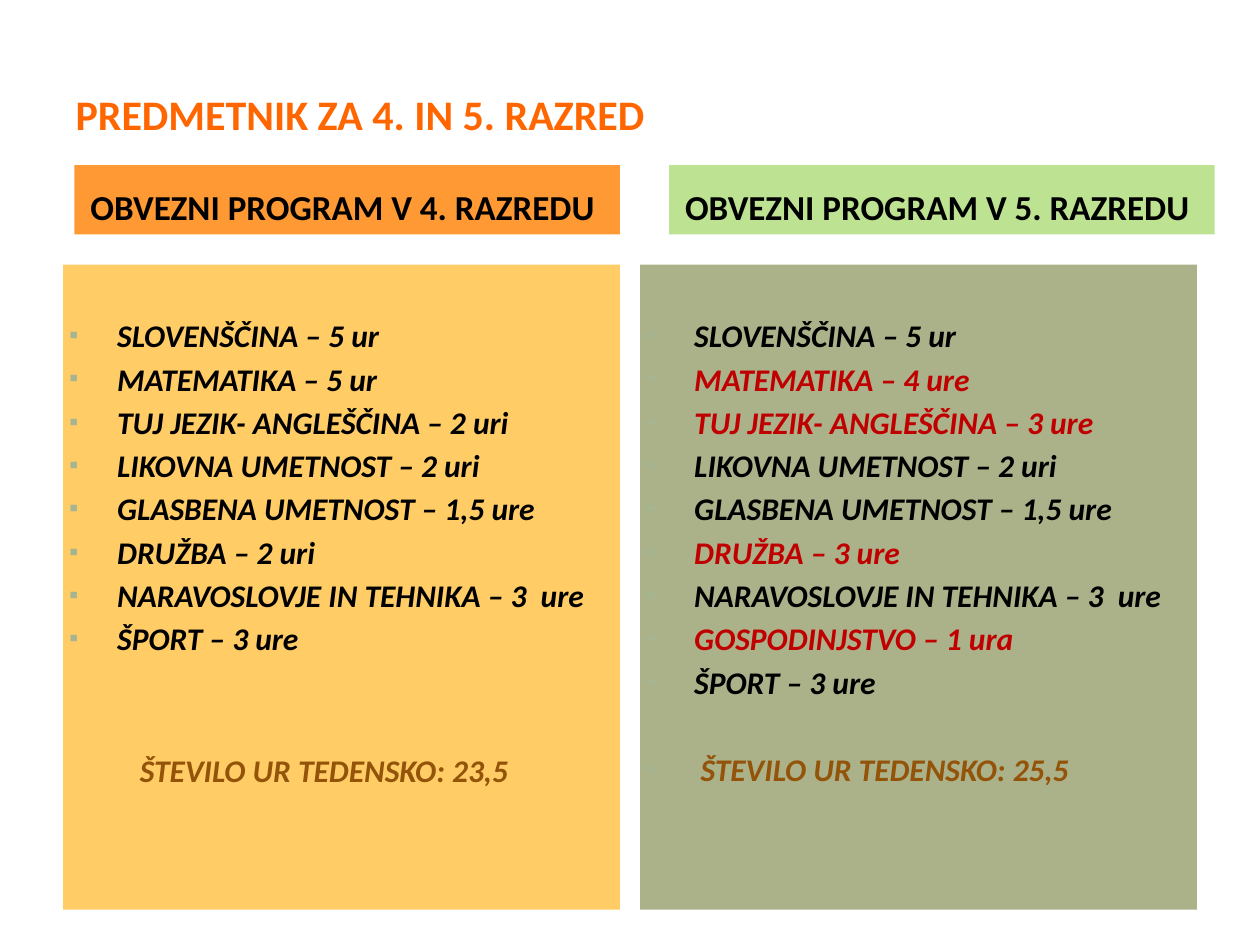
from lxml import etree
from pptx import Presentation
from pptx import util as u
from pptx.dml.color import RGBColor
from pptx.enum import text
from pptx.oxml.ns import qn

COLORS = {
    "title": "FF6600", "ink": "000000", "changed": "C00000", "total": "93540A",
    "bullet": "A5B592", "head4": "FF9933", "list4": "FFCC66",
    "head5": "BCE292", "list5": "ABB189",
}
ALIGN = text.PP_ALIGN
ANCHOR = text.MSO_ANCHOR
INDENT = 0.38

GRADE_4 = [
    ("SLOVENŠČINA – 5 ur", "ink"),
    ("MATEMATIKA – 5 ur", "ink"),
    ("TUJ JEZIK- ANGLEŠČINA – 2 uri", "ink"),
    ("LIKOVNA UMETNOST – 2 uri", "ink"),
    ("GLASBENA UMETNOST – 1,5 ure", "ink"),
    ("DRUŽBA – 2 uri", "ink"),
    ("NARAVOSLOVJE IN TEHNIKA – 3  ure", "ink"),
    ("ŠPORT – 3 ure", "ink"),
]
GRADE_5 = [
    ("SLOVENŠČINA – 5 ur", "ink"),
    ("MATEMATIKA – 4 ure", "changed"),
    ("TUJ JEZIK- ANGLEŠČINA – 3 ure", "changed"),
    ("LIKOVNA UMETNOST – 2 uri", "ink"),
    ("GLASBENA UMETNOST – 1,5 ure", "ink"),
    ("DRUŽBA – 3 ure", "changed"),
    ("NARAVOSLOVJE IN TEHNIKA – 3  ure", "ink"),
    ("GOSPODINJSTVO – 1 ura", "changed"),
    ("ŠPORT – 3 ure", "ink"),
]


def set_all(target, values):
    for name, value in values.items():
        setattr(target, name, value)


def place(box, bounds, insets, anchor, fill=None):
    """Move a placeholder; insets run left, top, right, bottom."""
    set_all(box, dict(zip(("left", "top", "width", "height"), map(u.Inches, bounds))))
    sides = ("margin_left", "margin_top", "margin_right", "margin_bottom")
    set_all(box.text_frame, dict(zip(sides, map(u.Inches, insets))))
    set_all(box.text_frame, {"word_wrap": True, "vertical_anchor": anchor,
                             "auto_size": text.MSO_AUTO_SIZE.NONE})
    if fill:
        box.fill.solid()
        box.fill.fore_color.rgb = RGBColor.from_string(COLORS[fill])


def write(para, words, size, color, italic=False):
    span = para.add_run()
    span.text = words
    set_all(span.font, {"name": "Calibri", "size": u.Pt(size), "bold": True, "italic": italic})
    span.font.color.rgb = RGBColor.from_string(COLORS[color])


def set_bullet(para, margin, shown=True):
    props = para._p.get_or_add_pPr()
    props.set("marL", str(u.Inches(margin)))
    props.set("indent", str(-u.Inches(margin) if shown else 0))
    if not shown:
        etree.SubElement(props, qn("a:buNone"))
        return
    color = etree.SubElement(props, qn("a:buClr"))
    etree.SubElement(color, qn("a:srgbClr"), val=COLORS["bullet"])
    etree.SubElement(props, qn("a:buSzPct"), val="80000")
    etree.SubElement(props, qn("a:buFont"), typeface="Calibri")
    etree.SubElement(props, qn("a:buChar"), char="▪")


def add_heading(box, words, left, fill):
    place(box, (left, 1.31, 4.33, 0.55), (0.05, 0.05, 0.12, 0.05), ANCHOR.BOTTOM, fill)
    para = box.text_frame.paragraphs[0]
    set_all(para, {"alignment": ALIGN.CENTER, "space_before": u.Pt(0)})
    write(para, words, 20, "ink")


def add_subjects(box, subjects, left, fill):
    place(box, (left, 2.1, 4.42, 5.12), (0.05, 0.41, 0.05, 0.05), ANCHOR.TOP, fill)
    frame = box.text_frame
    for number, (words, color) in enumerate(subjects):
        para = frame.add_paragraph() if number else frame.paragraphs[0]
        set_bullet(para, INDENT)
        para.space_before = u.Pt(3.15 if number else 0)
        write(para, words, 18, color, italic=True)


def add_total(box, hours, margin, gap, bulleted):
    para = box.text_frame.add_paragraph()
    set_bullet(para, margin, bulleted)
    para.space_before = u.Pt(gap)
    write(para, f"ŠTEVILO UR TEDENSKO: {hours}", 18, "total", italic=True)


def main():
    deck = Presentation()
    set_all(deck, {"slide_width": u.Inches(10), "slide_height": u.Inches(7.5)})
    page = deck.slides.add_slide(deck.slide_layouts.get_by_name("Comparison"))
    title, head4, list4, head5, list5 = page.placeholders

    place(title, (0.5, 0.33, 9, 0.82), (0.1, 0.05, 0.1, 0.05), ANCHOR.BOTTOM)
    para = title.text_frame.paragraphs[0]
    para.alignment = ALIGN.LEFT
    write(para, "PREDMETNIK ZA 4. IN 5. RAZRED", 24, "title")

    add_heading(head4, "OBVEZNI PROGRAM V 4. RAZREDU", 0.59, "head4")
    add_subjects(list4, GRADE_4, 0.5, "list4")
    add_total(list4, "23,5", 0.56, 53.5, bulleted=False)

    add_heading(head5, "OBVEZNI PROGRAM V 5. RAZREDU", 5.31, "head5")
    add_subjects(list5, GRADE_5, 5.08, "list5")
    add_total(list5, "25,5", 0.43, 28.3, bulleted=True)

    deck.save("out.pptx")


if __name__ == "__main__":
    main()
